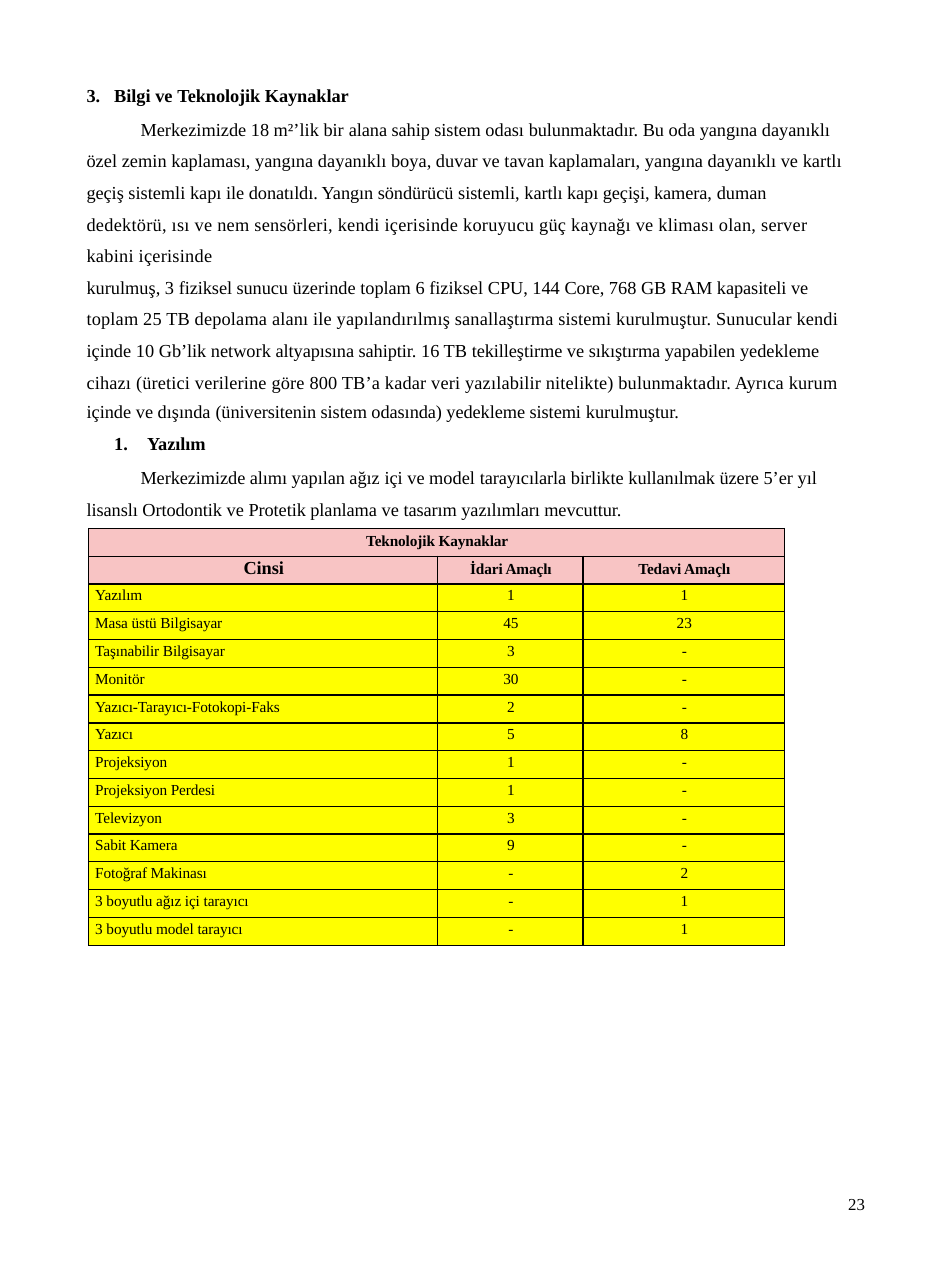
from lxml import etree
from pptx import Presentation
from pptx.dml.color import RGBColor as Rgb
from pptx.enum.text import MSO_AUTO_SIZE as AutoSize, PP_ALIGN as Align
from pptx.oxml.ns import qn
from pptx.util import Inches, Pt

COLORS = {"ink": "000000", "header": "F8C4C4", "row": "FFFF00"}
FONT = "Times New Roman"
# Letter spacing in points; a mark at the start of a piece picks a wider one
TIGHT = -0.05
SPREAD = {"~": 0.18, "^": 0.12, "°": 0.04}


def add_run(para, text, size, bold=False, spacing=0):
    run = para.add_run()
    run.text = text
    run.font.name, run.font.size, run.font.bold = FONT, Pt(size), bold
    run.font.color.rgb = Rgb.from_string(COLORS["ink"])
    if spacing:
        run.font._element.set("spc", str(round(spacing * 100)))


def indent(para, left, first=0):
    props = para._p.get_or_add_pPr()
    props.set("marL", str(Inches(left)))
    props.set("indent", str(Inches(first)))
    return props


prs = Presentation()
prs.slide_width, prs.slide_height = Inches(8.5), Inches(11.7)
W, H = prs.slide_width, prs.slide_height
slide = prs.slides.add_slide(prs.slide_layouts[6])

# Page number
page_box = slide.shapes.add_textbox(int(W * 0.9015), int(H * 0.9265), int(W * 0.0285), int(H * 0.017))
page = page_box.text_frame
page.margin_left = page.margin_right = page.margin_top = page.margin_bottom = 0
page.word_wrap = True
indent(page.paragraphs[0], 0.04)
page.paragraphs[0].line_spacing = Pt(13.2)
add_run(page.paragraphs[0], "23", 11)

# Body: "|" switches between normal and tight letters
# (number, left, first line, line spacing, space before, text)
BODY = [
    (3, 0.26, -0.25, None, 7, "Bilgi ve |Teknolojik Kaynaklar"),
    (None, 0.01, 0.49, 20.6, 1.6,
     "Merkezimizde 18 m²’lik bir |alana sahip sistem |odası |bulunmaktadır. |Bu oda |yangına |"
     "dayanıklı |°özel zemin kaplaması, yangına dayanıklı boya, duvar ve "
     "tavan kaplamaları, yangına dayanıklı ve kartlı"),
    (None, 0.01, 0, 20.6, 0.2,
     "|geçiş |sistemli |kapı |ile |donatıldı. Yangın söndürücü |sistemli, |"
     "kartlı kapı geçişi, kamera, |duman |"
     "~dedektörü, ısı ve nem sensörleri, kendi içerisinde koruyucu güç kaynağı ve kliması olan, "
     "server kabini içerisinde"),
    (None, 0.01, 0, 20.6, 0.2,
     "kurulmuş, 3 |fiziksel sunucu |üzerinde |toplam |6 fiziksel |CPU, |144 |Core, |768 |"
     "GB RAM kapasiteli |ve |^toplam 25 TB depolama alanı ile yapılandırılmış sanallaştırma "
     "sistemi kurulmuştur. Sunucular kendi"),
    (None, 0.01, 0, 20.6, 0.2,
     "içinde 10 |Gb’lik |network |altyapısına sahiptir. |16 TB |tekilleştirme |ve |"
     "sıkıştırma yapabilen |yedekleme |^cihazı (üretici verilerine göre 800 TB’a kadar veri "
     "yazılabilir nitelikte) bulunmaktadır. Ayrıca kurum"),
    (None, 0.01, 0, None, 4.7,
     "içinde ve dışında |(üniversitenin sistem odasında) yedekleme sistemi |kurulmuştur."),
    (1, 0.56, -0.3, None, 6.6, "|Yazılım"),
    (None, 0.01, 0.49, 20.8, 1.4,
     "|Merkezimizde alımı yapılan ağız |içi ve model |tarayıcılarla |birlikte |"
     "kullanılmak üzere |5’er yıl |lisanslı Ortodontik |ve |Protetik planlama |ve |"
     "tasarım yazılımları mevcuttur."),
]
body_box = slide.shapes.add_textbox(int(W * 0.0914), int(H * 0.0566), int(W * 0.814), int(H * 0.3214))
body = body_box.text_frame
body.word_wrap = True
body.auto_size = AutoSize.SHAPE_TO_FIT_TEXT
body.margin_left = body.margin_right = body.margin_bottom = 0
body.margin_top = Inches(0.1)
for i, (number, left, first, leading, before, text) in enumerate(BODY):
    para = body.add_paragraph() if i else body.paragraphs[0]
    props = indent(para, left, first)
    para.space_before = Pt(before)
    if leading:
        para.line_spacing = Pt(leading)
    if number:
        para.level = int(left > 0.5)
        etree.SubElement(props, qn("a:buFont"), typeface=FONT)
        etree.SubElement(props, qn("a:buAutoNum"), type="arabicPeriod", startAt=str(number))
        tabs = etree.SubElement(props, qn("a:tabLst"))
        etree.SubElement(tabs, qn("a:tab"), pos=str(Inches(left)), algn="l")
    for j, piece in enumerate(text.split("|")):
        if piece:
            spacing = SPREAD.get(piece[0], TIGHT * (j % 2))
            add_run(para, piece.lstrip("~^°"), 12, bool(number), spacing)

# Table of technological resources
RESOURCES = [
    ("Teknolojik Kaynaklar", "", ""),
    ("Cinsi", "İdari Amaçlı", "Tedavi Amaçlı"),
    ("Yazılım", "1", "1"),
    ("Masa üstü Bilgisayar", "45", "23"),
    ("Taşınabilir Bilgisayar", "3", "-"),
    ("Monitör", "30", "-"),
    ("Yazıcı-Tarayıcı-Fotokopi-Faks", "2", "-"),
    ("Yazıcı", "5", "8"),
    ("Projeksiyon", "1", "-"),
    ("Projeksiyon Perdesi", "1", "-"),
    ("Televizyon", "3", "-"),
    ("Sabit Kamera", "9", "-"),
    ("Fotoğraf Makinası", "-", "2"),
    ("3 boyutlu ağız içi tarayıcı", "-", "1"),
    ("3 boyutlu model tarayıcı", "-", "1"),
]
HEADER_ROWS = 2
COLUMN_WIDTHS = (3.17, 1.32, 1.83)
ROW_HEIGHT = Inches(3.79 / len(RESOURCES))
resources = slide.shapes.add_table(
    len(RESOURCES), len(COLUMN_WIDTHS), int(W * 0.0947), int(H * 0.4103),
    Inches(sum(COLUMN_WIDTHS)), ROW_HEIGHT * len(RESOURCES)).table
resources.first_row = resources.horz_banding = False
for column, width in zip(resources.columns, COLUMN_WIDTHS):
    column.width = Inches(width)
resources.cell(0, 0).merge(resources.cell(0, 2))

for r, entries in enumerate(RESOURCES):
    resources.rows[r].height = ROW_HEIGHT
    header = r < HEADER_ROWS
    for c, entry in enumerate(entries):
        cell = resources.cell(r, c)
        large = entry == "Cinsi"
        cell.margin_left = cell.margin_right = cell.margin_bottom = 0
        cell.margin_top = Inches(0.02 if large else 0.04 if header else 0.03)
        # Borders come before the fill
        for side in ("lnL", "lnR", "lnT", "lnB"):
            border = etree.SubElement(cell._tc.get_or_add_tcPr(), qn(f"a:{side}"), w=str(Pt(1)))
            ink = etree.SubElement(border, qn("a:solidFill"))
            etree.SubElement(ink, qn("a:srgbClr"), val=COLORS["ink"])
        cell.fill.solid()
        cell.fill.fore_color.rgb = Rgb.from_string(COLORS["header" if header else "row"])
        if entry:
            label = cell.text_frame.paragraphs[0]
            centred = header or c > 0
            indent(label, 0.01 if centred else 0.06)
            label.alignment = Align.CENTER if centred else Align.LEFT
            label.space_before = Pt(1.3 if large else 2.6 if header else 2.4)
            add_run(label, entry, 12 if large else 10, header, TIGHT if header or c == 0 else 0)

prs.save("out.pptx")
